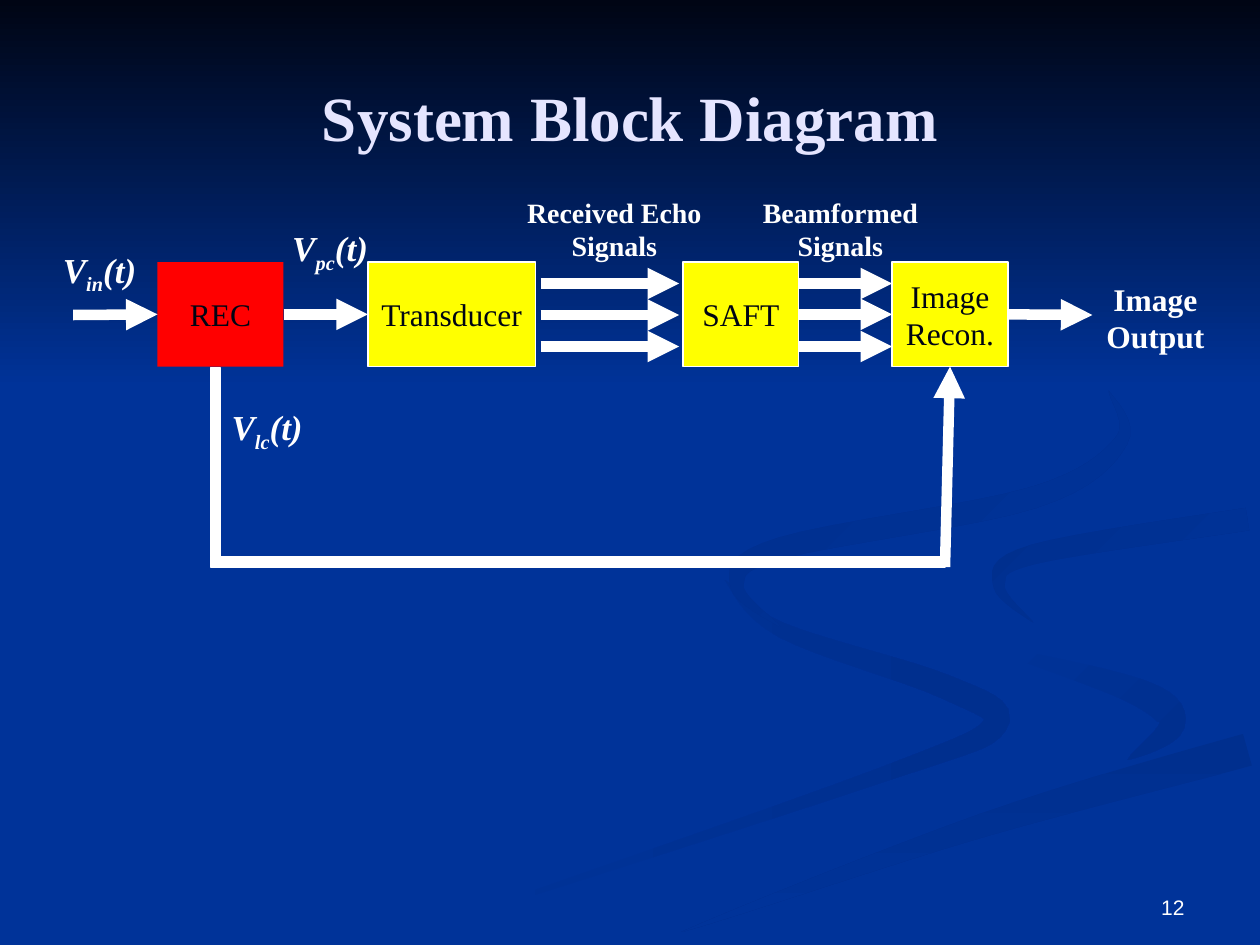
from math import hypot, pi, sin

from lxml import etree
from pptx import Presentation
from pptx.dml.color import RGBColor as RGB
from pptx.enum.shapes import MSO_CONNECTOR as Link, MSO_SHAPE as Shape
from pptx.enum.text import MSO_ANCHOR as Anchor, PP_ALIGN as Align
from pptx.oxml.ns import qn
from pptx.util import Inches, Pt

BLUE = RGB(0x00, 0x33, 0x99)
DARK = RGB(0x00, 0x05, 0x14)
SHADE = RGB(0x00, 0x2F, 0x8E)
PALE = RGB(0xE5, 0xE5, 0xFF)
WHITE = RGB(0xFF, 0xFF, 0xFF)
RED = RGB(0xFF, 0x00, 0x00)
YELLOW = RGB(0xFF, 0xFF, 0x00)
SERIF = "Times New Roman"
TOP, LEFT, BOTTOM, RIGHT = range(4)

# Ribbons: colours, gradient angle, half width, taper start, spine
RIBBONS = [
    (BLUE, SHADE, 0, 0.1, 0,
     [(5.75, 4.6), (6.2, 5), (7.5, 5.45), (7.9, 5.75), (7, 6.15), (3.3, 7.4)]),
    (BLUE, SHADE, 45, 0.12, 0,
     [(7.8, 5.12), (9, 5.48), (9.3, 5.75), (8.95, 6.03)]),
    (SHADE, BLUE, 90, 0.13, 0.5,
     [(9.9, 5.95), (7.8, 6.55), (5.4, 7.4)]),
    (SHADE, BLUE, 45, 0.09, 0.5,
     [(9.9, 4.12), (8.2, 4.4), (7.93, 4.65), (8.2, 4.94)]),
    (SHADE, BLUE, 45, 0.09, 0,
     [(8.8, 3.1), (8.9, 3.5), (8.2, 3.95), (6.2, 4.35), (5.85, 4.65), (6.2, 4.98)]),
]


def smooth(spine, steps=8):
    """Points of a Catmull-Rom curve through the spine."""
    ends = [spine[0], *spine, spine[-1]]
    curve = []
    for a, b, c, d in zip(ends, ends[1:], ends[2:], ends[3:]):
        for step in range(steps):
            t = step / steps
            curve.append(tuple(
                q + t / 2 * (r - p + t * (2 * p - 5 * q + 4 * r - s
                                          + t * (3 * (q - r) + s - p)))
                for p, q, r, s in zip(a, b, c, d)))
    return curve + [spine[-1]]


def outline(spine, half, begin):
    """Tapered outline around the smoothed spine."""
    curve = smooth(spine)
    last = len(curve) - 1
    near, far = [], []
    for i, (x, y) in enumerate(curve):
        (x1, y1), (x2, y2) = curve[max(i - 1, 0)], curve[min(i + 1, last)]
        span = hypot(x2 - x1, y2 - y1)
        wide = half * sin(pi * (begin + (1 - begin) * i / last)) / span
        dx, dy = (y1 - y2) * wide, (x2 - x1) * wide
        near.append((x + dx, y + dy))
        far.append((x - dx, y - dy))
    return near + far[::-1]


def shade(shape, start, end, angle):
    """Fill with a two-colour gradient, angle clockwise."""
    shape.shadow.inherit = False
    shape.line.fill.background()
    shape.fill.gradient()
    shape.fill.gradient_angle = (360 - angle) % 360
    for stop, color in zip(shape.fill.gradient_stops, (start, end)):
        stop.color.rgb = color


def rect(slide, x, y, w, h, fill, edge=WHITE):
    box = slide.shapes.add_shape(
        Shape.RECTANGLE, Inches(x), Inches(y), Inches(w), Inches(h))
    box.shadow.inherit = False
    box.fill.solid()
    box.fill.fore_color.rgb = fill
    if edge is None:
        box.line.fill.background()
    else:
        box.line.color.rgb = edge
        box.line.width = Pt(0.75)
    return box


def style(par, size, color, bold=False, italic=False, name=SERIF, align=Align.CENTER):
    par.alignment = align
    font = par.font
    font.name, font.size, font.bold, font.italic = name, Pt(size), bold, italic
    font.color.rgb = color


def label(slide, x, y, w, h, text, size, color=WHITE, anchor=Anchor.TOP, **look):
    box = slide.shapes.add_textbox(Inches(x), Inches(y), Inches(w), Inches(h))
    frame = box.text_frame
    frame.word_wrap = True
    frame.vertical_anchor = anchor
    par = frame.paragraphs[0]
    par.text = text
    style(par, size, color, **look)
    return par


def signal(slide, x, y, sub):
    """Signal name V(t) with a subscript."""
    par = label(slide, x, y, 1.58, 0.44, "V", 20, bold=True, italic=True)
    low = par.add_run()
    low.text = sub
    low._r.get_or_add_rPr().set("baseline", "-25000")
    par.add_run().text = "(t)"


def block(slide, x, y, w, h, lines, fill=YELLOW, edge=WHITE):
    box = rect(slide, x, y, w, h, fill, edge)
    frame = box.text_frame
    frame.word_wrap = False
    frame.vertical_anchor = Anchor.MIDDLE
    frame.text = lines
    for par in frame.paragraphs:
        style(par, 18, DARK)
    return box


def arrow(slide, x1, y1, x2, y2, start=None, end=None):
    """Arrow; start and end are (block, side) pairs to join."""
    line = slide.shapes.add_connector(
        Link.STRAIGHT, Inches(x1), Inches(y1), Inches(x2), Inches(y2))
    line.line.color.rgb = WHITE
    line.line.width = Pt(6)
    if start:
        line.begin_connect(*start)
    if end:
        line.end_connect(*end)
    etree.SubElement(line.line._get_or_add_ln(), qn("a:tailEnd"), type="triangle")
    etree.SubElement(line._element.spPr, qn("a:effectLst"))


def backdrop(slide, x, y, w):
    slide.background.fill.solid()
    slide.background.fill.fore_color.rgb = BLUE
    for start, end, angle, half, begin, spine in RIBBONS:
        spots = [(Inches(x + px), Inches(y + py))
                 for px, py in outline(spine, half, begin)]
        pen = slide.shapes.build_freeform(*spots[0])
        pen.add_line_segments(spots[1:], close=True)
        shade(pen.convert_to_shape(), start, end, angle)
    # Dark band fading down from the top
    shade(rect(slide, x, y, w, 3.08, BLUE), DARK, BLUE, 90)


def diagram(slide, x, y):
    top, high = y + 0.58, 0.83
    mid, base = y + 1, y + 1.42

    # Blocks
    rec = block(slide, x + 1.25, top, 1, high, "REC", RED, None)
    probe = block(slide, x + 2.92, top, 1.33, high, "Transducer")
    saft = block(slide, x + 5.42, top, 0.92, high, "SAFT")
    recon = block(slide, x + 7.08, top, 0.92, high, "Image\nRecon.")

    # Feedback path from REC to image reconstruction
    rect(slide, x + 1.67, base, 0.08, 1.5, WHITE)
    rect(slide, x + 1.67, base + 1.5, 5.83, 0.08, WHITE)
    arrow(slide, x + 7.5, base + 1.58, x + 7.5, base, end=(recon, BOTTOM))

    # Single arrows
    arrow(slide, x + 0.58, mid, x + 1.25, mid, end=(rec, LEFT))
    arrow(slide, x + 2.25, mid, x + 2.92, mid, (rec, RIGHT), (probe, LEFT))
    arrow(slide, x + 8, mid, x + 8.67, mid, start=(recon, RIGHT))

    # Triple arrows
    for gap in (-0.25, 0, 0.25):
        row = mid + gap
        ends = ((saft, RIGHT), (recon, LEFT)) if gap == 0 else ()
        arrow(slide, x + 4.29, row, x + 5.39, row)
        arrow(slide, x + 6.33, row, x + 7.08, row, *ends)

    # Labels
    for left, down, sub in ((0, 0.42, "in"), (1.83, 0.25, "pc"), (1.33, 1.67, "lc")):
        signal(slide, x + left, y + down, sub)
    label(slide, x + 4, y, 1.75, 0.64, "Received Echo Signals", 16, bold=True)
    label(slide, x + 5.92, y, 1.5, 0.64, "Beamformed Signals", 16, bold=True)
    label(slide, x + 8.67, y + 0.67, 1, 0.71, "Image Output", 18, bold=True)


def main():
    deck = Presentation()
    deck.slide_width, deck.slide_height = Inches(10), Inches(7.5)
    slide = deck.slides.add_slide(deck.slide_layouts[6])
    backdrop(slide, 0, 0, 10)
    label(slide, 0.5, 0.3, 9, 1.25, "System Block Diagram", 36, PALE, Anchor.MIDDLE, bold=True)
    diagram(slide, 0, 1.5)
    label(slide, 7.17, 6.83, 2.33, 0.52, "12", 12, WHITE, Anchor.BOTTOM,
          name="Arial", align=Align.RIGHT)
    deck.save("out.pptx")


if __name__ == "__main__":
    main()
